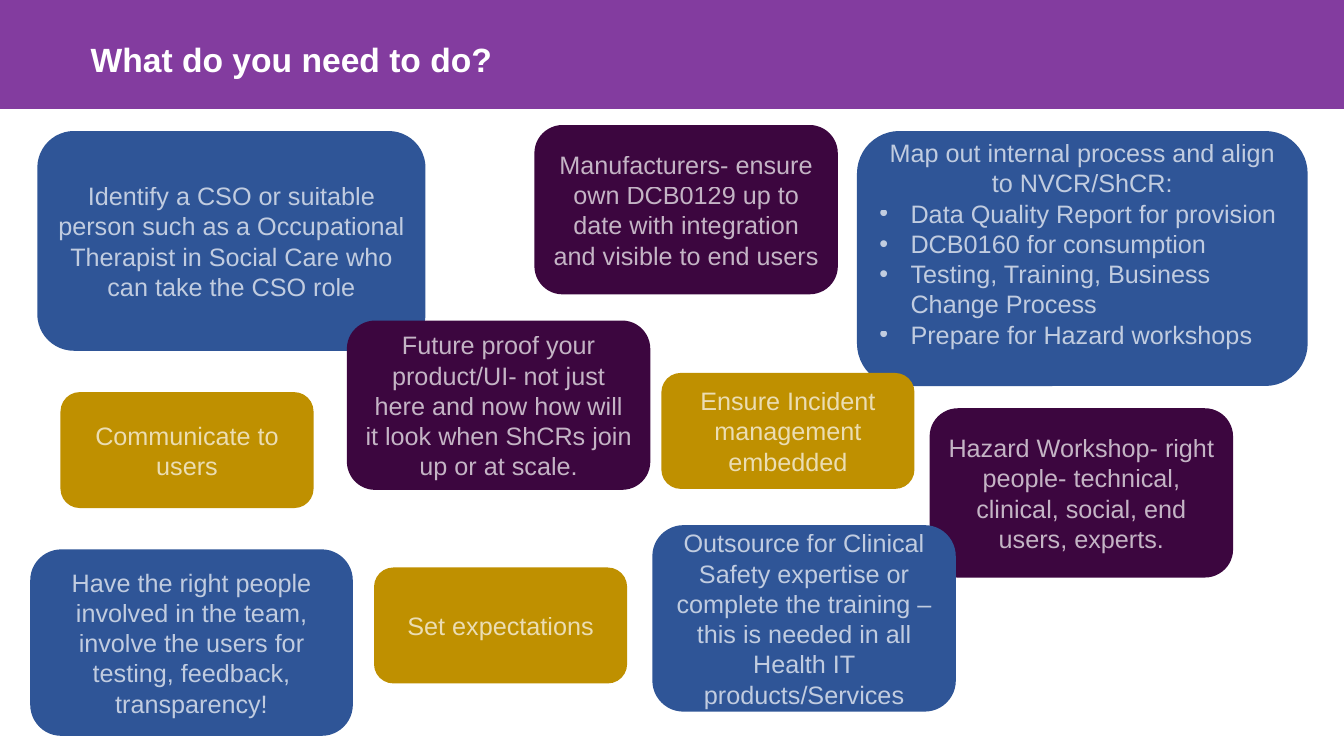
import dataclasses

import pptx
import pptx.dml.color
import pptx.enum.shapes
import pptx.enum.text
import pptx.oxml.ns
import pptx.util
from lxml import etree

Inches = pptx.util.Inches
Pt = pptx.util.Pt
RGB = pptx.dml.color.RGBColor.from_string
Shape = pptx.enum.shapes.MSO_SHAPE
Align = pptx.enum.text.PP_ALIGN
Anchor = pptx.enum.text.MSO_ANCHOR
qn = pptx.oxml.ns.qn


@dataclasses.dataclass(frozen=True)
class Theme:
    font: str = "Arial"
    band: str = "833C9F"
    blue: str = "2F5597"
    plum: str = "3C063F"
    gold: str = "BF9000"
    text: str = "FFFFFF"
    card_opacity: int = 70
    title_size: int = 24
    card_size: int = 18


THEME = Theme()
SLIDE_W, SLIDE_H = 13.33, 7.5
BAND_H = 1.08
PLUM_SIZE = (3.01, 1.68)
GOLD_SIZE = (2.51, 1.15)
BULLET_INDENT = 0.31
TITLE = "What do you need to do?"

# Back to front: fill, (left, top, width, height), text, bullets
CARDS = [
    (THEME.blue, (0.37, 1.3, 3.85, 2.18),
     "Identify a CSO or suitable person such as a Occupational Therapist "
     "in Social Care who can take the CSO role", []),
    (THEME.blue, (0.3, 5.45, 3.2, 1.85),
     "Have the right people involved in the team, involve the users for "
     "testing, feedback, transparency!", []),
    (THEME.blue, (8.5, 1.3, 4.47, 2.53),
     "Map out internal process and align to NVCR/ShCR:",
     ["Data Quality Report for provision", "DCB0160 for consumption",
      "Testing, Training, Business Change Process",
      "Prepare for Hazard workshops"]),
    (THEME.plum, (9.22, 4.05, *PLUM_SIZE),
     "Hazard Workshop- right people- technical, clinical, social, "
     "end users, experts.", []),
    (THEME.plum, (5.3, 1.24, *PLUM_SIZE),
     "Manufacturers- ensure own DCB0129 up to date with integration "
     "and visible to end users", []),
    (THEME.blue, (6.47, 5.21, 3.01, 1.85),
     "Outsource for Clinical Safety expertise or complete the training – "
     "this is needed in all Health IT products/Services", []),
    (THEME.plum, (3.44, 3.18, *PLUM_SIZE),
     "Future proof your product/UI- not just here and now how will it "
     "look when ShCRs join up or at scale.", []),
    (THEME.gold, (3.71, 5.63, *GOLD_SIZE), "Set expectations", []),
    (THEME.gold, (0.6, 3.89, *GOLD_SIZE), "Communicate to users", []),
    (THEME.gold, (6.56, 3.7, *GOLD_SIZE),
     "Ensure Incident management embedded", []),
]


def set_attributes(obj, values):
    for name, value in values.items():
        setattr(obj, name, value)


def add_run(p, text, size, bold=False, opacity=100):
    r = p.add_run()
    r.text = text
    set_attributes(r.font, {"name": THEME.font, "size": Pt(size), "bold": bold})
    r.font.color.rgb = RGB(THEME.text)
    if opacity < 100:
        color = r.font._element.find(".//" + qn("a:srgbClr"))
        etree.SubElement(color, qn("a:alpha"), val=str(opacity * 1000))


def add_block(s, kind, box, fill):
    sp = s.shapes.add_shape(kind, *map(Inches, box))
    sp.shadow.inherit = False
    sp.fill.solid()
    sp.fill.fore_color.rgb = RGB(fill)
    sp.line.fill.background()
    return sp


def make_bullet(p):
    pPr = p._p.get_or_add_pPr()
    indent = Inches(BULLET_INDENT)
    pPr.set("marL", str(indent))
    pPr.set("indent", str(-indent))
    etree.SubElement(pPr, qn("a:buFont"), typeface=THEME.font)
    etree.SubElement(pPr, qn("a:buChar"), char="•")


def add_card(s, box, fill, text, bullets):
    tf = add_block(s, Shape.ROUNDED_RECTANGLE, box, fill).text_frame
    set_attributes(tf, {"word_wrap": True, "vertical_anchor": Anchor.MIDDLE})
    if bullets:
        tf.margin_bottom = Inches(0.35)
    for i, line in enumerate([text, *bullets]):
        p = tf.add_paragraph() if i else tf.paragraphs[0]
        p.alignment = Align.LEFT if i else Align.CENTER
        if i:
            make_bullet(p)
        add_run(p, line, THEME.card_size, opacity=THEME.card_opacity)


def add_header(s, box):
    """Place the band, with the title in front of it."""
    left, top, width, height = box
    band = add_block(s, Shape.RECTANGLE, box, THEME.band)
    title = s.shapes.title
    band._element.addnext(title._element)
    set_attributes(title, {
        "left": Inches(left + 0.8), "top": Inches(top + 0.34),
        "width": Inches(width - 2.04), "height": Inches(0.5)})
    tf = title.text_frame
    set_attributes(tf, {
        "word_wrap": True, "vertical_anchor": Anchor.TOP,
        "auto_size": pptx.enum.text.MSO_AUTO_SIZE.NONE})
    p = tf.paragraphs[0]
    p.alignment = Align.LEFT
    add_run(p, TITLE, THEME.title_size, bold=True)


def add_actions_slide(prs):
    s = prs.slides.add_slide(prs.slide_layouts[5])
    add_header(s, (0, 0, SLIDE_W, BAND_H))
    for fill, box, text, bullets in CARDS:
        add_card(s, box, fill, text, bullets)


def main():
    prs = pptx.Presentation()
    set_attributes(prs, {"slide_width": Inches(SLIDE_W),
                         "slide_height": Inches(SLIDE_H)})
    add_actions_slide(prs)
    prs.save("out.pptx")


if __name__ == "__main__":
    main()
